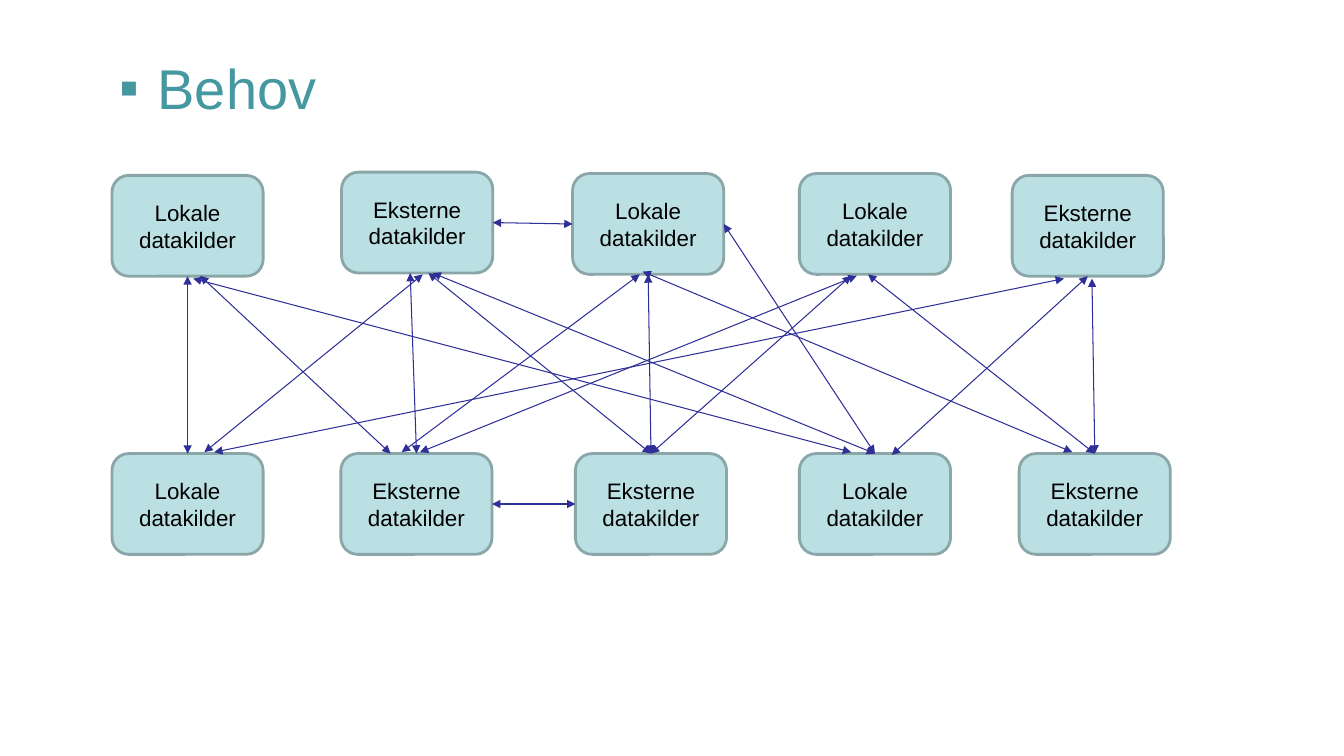
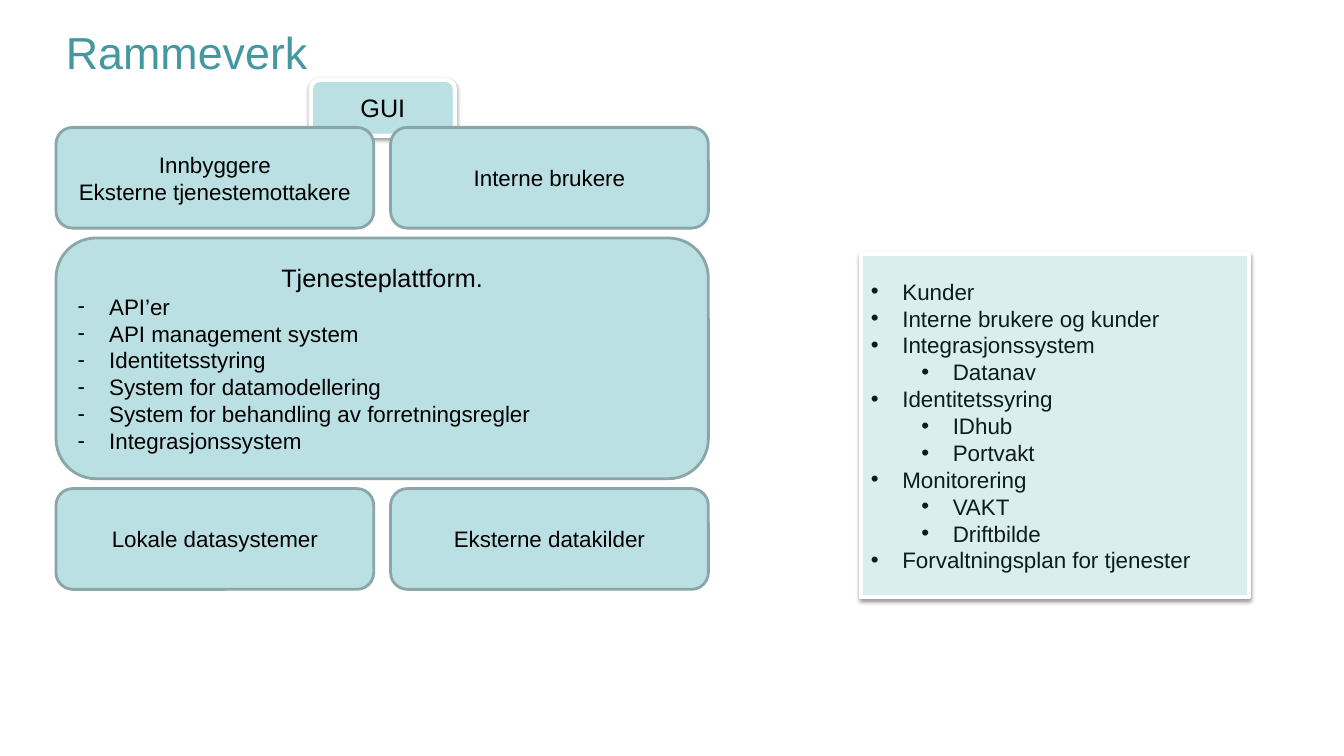
"""Build two slides on data sources and the service framework."""
from lxml.etree import SubElement
from pptx import Presentation
from pptx.dml.color import RGBColor
from pptx.enum.shapes import MSO_CONNECTOR as Connector, MSO_SHAPE as Shape
from pptx.enum.text import MSO_ANCHOR as Anchor, PP_ALIGN as Align
from pptx.oxml.ns import qn
from pptx.util import Pt

FONT = "Arial"
TEAL, PALE, PANEL, EDGE = "4597A0", "BBE0E3", "DAEDEF", "8AA6A8"
BLACK, INK, WHITE, ARROW = "000000", "0C1C1D", "FFFFFF", "2F2F98"
TOP, LEFT, BOTTOM, RIGHT = range(4)
LOCAL, EXTERNAL = "Lokale datakilder", "Eksterne datakilder"

SOURCES = {
    "A1": (LOCAL, 80, 125.3), "B1": (EXTERNAL, 244, 123),
    "C1": (LOCAL, 409, 124), "D1": (LOCAL, 571, 124),
    "E1": (EXTERNAL, 723, 125.3),
    "A2": (LOCAL, 80, 324), "B2": (EXTERNAL, 243.5, 324),
    "C2": (EXTERNAL, 411, 324), "D2": (LOCAL, 571, 324),
    "E2": (EXTERNAL, 728, 324),
}
FLOWS = [
    (("A1", BOTTOM), ("A2", TOP)),
    ((143, 197), (279, 324)),
    ((138, 199), (608, 323)),
    ((302, 196), (146, 323)),
    ((293, 195), ("B2", TOP)),
    ((306, 195), ("C2", TOP)),
    ((309, 195), ("D2", TOP)),
    (("B1", RIGHT), ("C1", LEFT)),
    ((457, 196), (287, 323)),
    (("C1", BOTTOM), ("C2", TOP)),
    ((459, 194), (766, 323)),
    (("C1", RIGHT), ("D2", TOP)),
    ((612, 197), (300, 323)),
    ((608, 197), ("C2", TOP)),
    ((620, 196), ("E2", TOP)),
    ((760, 199), (153, 323)),
    (("E1", BOTTOM), (637, 325)),
    ((780, 199), ("E2", TOP)),
    (("B2", RIGHT), ("C2", LEFT)),
]
PLATFORM = [
    "API’er", "API management system", "Identitetsstyring",
    "System for datamodellering",
    "System for behandling av forretningsregler", "Integrasjonssystem",
]
TOPICS = [
    ("Kunder", []),
    ("Interne brukere og kunder", []),
    ("Integrasjonssystem", ["Datanav"]),
    ("Identitetssyring", ["IDhub", "Portvakt"]),
    ("Monitorering", ["VAKT", "Driftbilde"]),
    ("Forvaltningsplan for tjenester", []),
]


def color(value):
    """Turn a hex string into a colour."""
    return RGBColor.from_string(value)


def style(para, size, ink):
    """Format every run of a paragraph."""
    for span in para.runs:
        span.font.name = FONT
        span.font.size = Pt(size)
        span.font.color.rgb = color(ink)


def add_bullet(para, mark, hanging, level=0):
    """Give a paragraph a bullet with a hanging indent."""
    para.alignment = Align.LEFT
    para.level = level
    props = para._p.get_or_add_pPr()
    props.set("marL", str(Pt(hanging + 36 * level)))
    props.set("indent", str(-Pt(hanging)))
    SubElement(props, qn("a:buFont"), typeface=FONT)
    SubElement(props, qn("a:buChar"), char=mark)


def add_title(page, text, left, top, width, height, size):
    """Add a slide title and return its paragraph."""
    frame = page.shapes.add_textbox(
        Pt(left), Pt(top), Pt(width), Pt(height)).text_frame
    frame.word_wrap = True
    frame.vertical_anchor = Anchor.MIDDLE
    para = frame.paragraphs[0]
    para.text = text
    style(para, size, TEAL)
    return para


def add_box(page, text, left, top, width, height=72, size=16,
            kind=Shape.ROUNDED_RECTANGLE, fill=PALE, edge=EDGE, weight=2):
    """Add a filled box with centred text."""
    box = page.shapes.add_shape(
        kind, Pt(left), Pt(top), Pt(width), Pt(height))
    box.shadow.inherit = False
    box.fill.solid()
    box.fill.fore_color.rgb = color(fill)
    box.line.color.rgb = color(edge)
    box.line.width = Pt(weight)
    frame = box.text_frame
    frame.word_wrap = True
    frame.vertical_anchor = Anchor.MIDDLE
    frame.text = text
    for para in frame.paragraphs:
        para.alignment = Align.CENTER
        style(para, size, BLACK)
    return box


def add_raised_box(page, text, left, top, width, height, **options):
    """Add a white-edged box with a soft shadow below it."""
    box = add_box(page, text, left, top, width, height,
                  edge=WHITE, weight=3, **options)
    effects = box._element.spPr.find(qn("a:effectLst"))
    shadow = SubElement(effects, qn("a:outerShdw"), blurRad=str(Pt(3.1)),
                        dist=str(Pt(1.6)), dir="5400000", rotWithShape="0")
    tint = SubElement(shadow, qn("a:srgbClr"), val=BLACK)
    SubElement(tint, qn("a:alpha"), val="38000")
    return box


def add_items(box, items, mark, ink):
    """Fill a box with bulleted (text, level) items after any heading."""
    frame = box.text_frame
    for text, level in items:
        para = frame.add_paragraph() if frame.text else frame.paragraphs[0]
        para.text = text
        add_bullet(para, mark, 22.5, level)
        style(para, 16, ink)


def add_flow(page, boxes, start, end):
    """Add a two-headed arrow between points or box sides."""
    points = [Pt(0) if isinstance(where[0], str) else Pt(value)
              for where in (start, end) for value in where]
    flow = page.shapes.add_connector(Connector.STRAIGHT, *points)
    for where, join in ((start, flow.begin_connect), (end, flow.end_connect)):
        if isinstance(where[0], str):
            join(boxes[where[0]], where[1])
    flow.line.color.rgb = color(ARROW)
    flow.line.width = Pt(0.75)
    for tag in ("a:headEnd", "a:tailEnd"):
        SubElement(flow.line._get_or_add_ln(), qn(tag), type="triangle")
    SubElement(flow._element.spPr, qn("a:effectLst"))


def build_needs(page):
    """Draw the web of data sources."""
    title = add_title(page, "Behov", 78.5, 31, 256, 63, 40)
    add_bullet(title, "▪", 27)
    boxes = {name: add_box(page, text, left, top, 108)
             for name, (text, left, top) in SOURCES.items()}
    for start, end in FLOWS:
        add_flow(page, boxes, start, end)


def build_framework(page):
    """Draw the layered framework and its topic list."""
    left, half, gap = 40, 227, 12
    right = left + half + gap
    add_raised_box(page, "GUI", 222, 57, 103, 40, size=18)
    add_title(page, "Rammeverk", left, 18, 864, 37, 32)
    rows = [
        (91, "Innbyggere\nEksterne tjenestemottakere", "Interne brukere"),
        (349, "Lokale datasystemer", EXTERNAL),
    ]
    for top, first, second in rows:
        add_box(page, first, left, top, half)
        add_box(page, second, right, top, half)
    platform = add_box(page, "Tjenesteplattform.", left, 170,
                       2 * half + gap, 172, size=18)
    add_items(platform, [(text, 0) for text in PLATFORM], "-", BLACK)
    panel = add_raised_box(page, "", 615, 181.5, 277, 245,
                           kind=Shape.RECTANGLE, fill=PANEL)
    topics = [item for topic, details in TOPICS
              for item in [(topic, 0)] + [(text, 1) for text in details]]
    add_items(panel, topics, "•", INK)


def main():
    """Build and save the deck."""
    deck = Presentation()
    deck.slide_width, deck.slide_height = Pt(960), Pt(540)
    for build in (build_needs, build_framework):
        build(deck.slides.add_slide(deck.slide_layouts[6]))
    deck.save("out.pptx")


if __name__ == "__main__":
    main()
